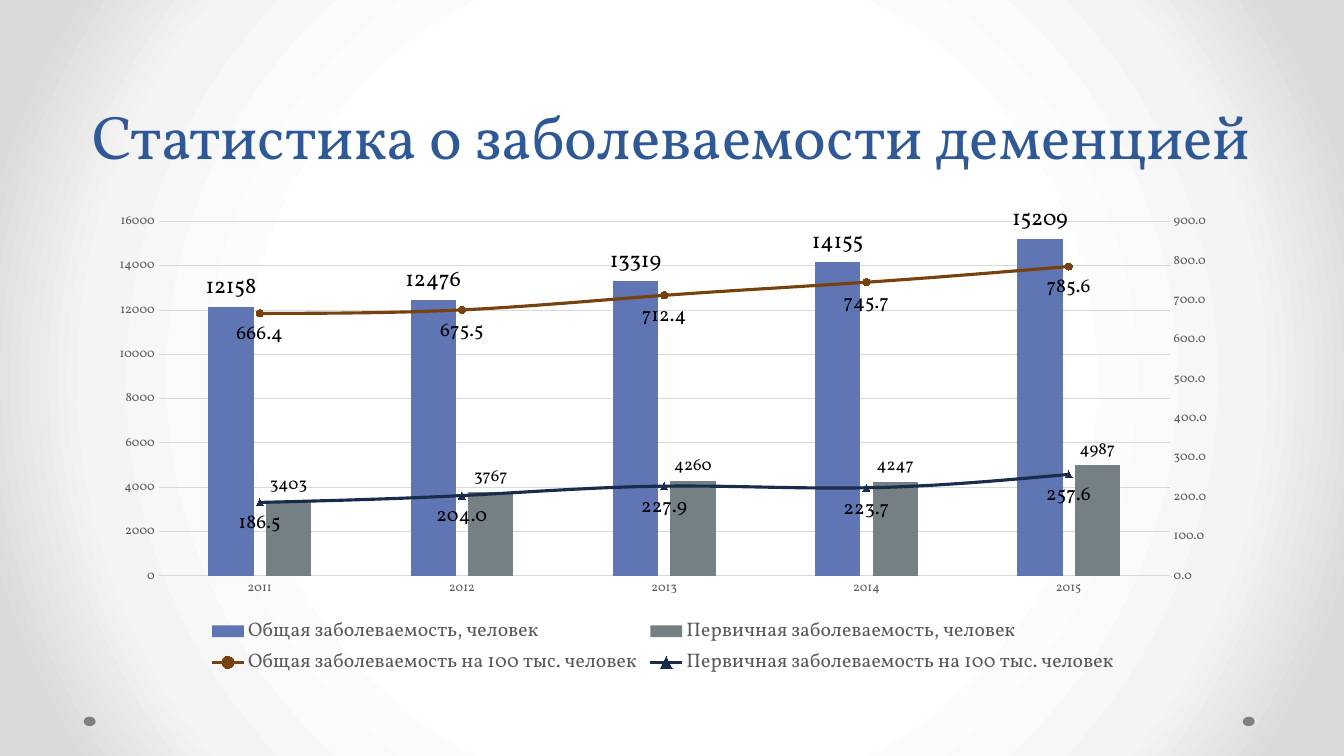
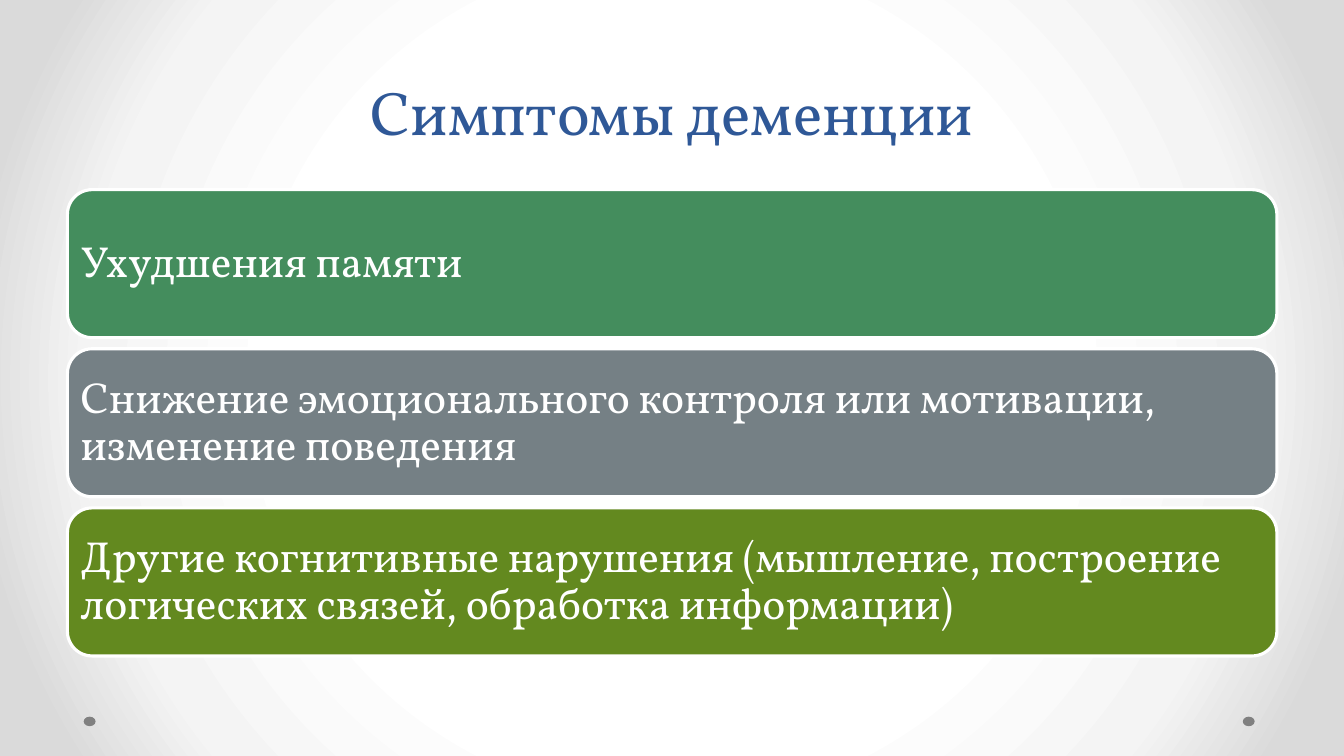
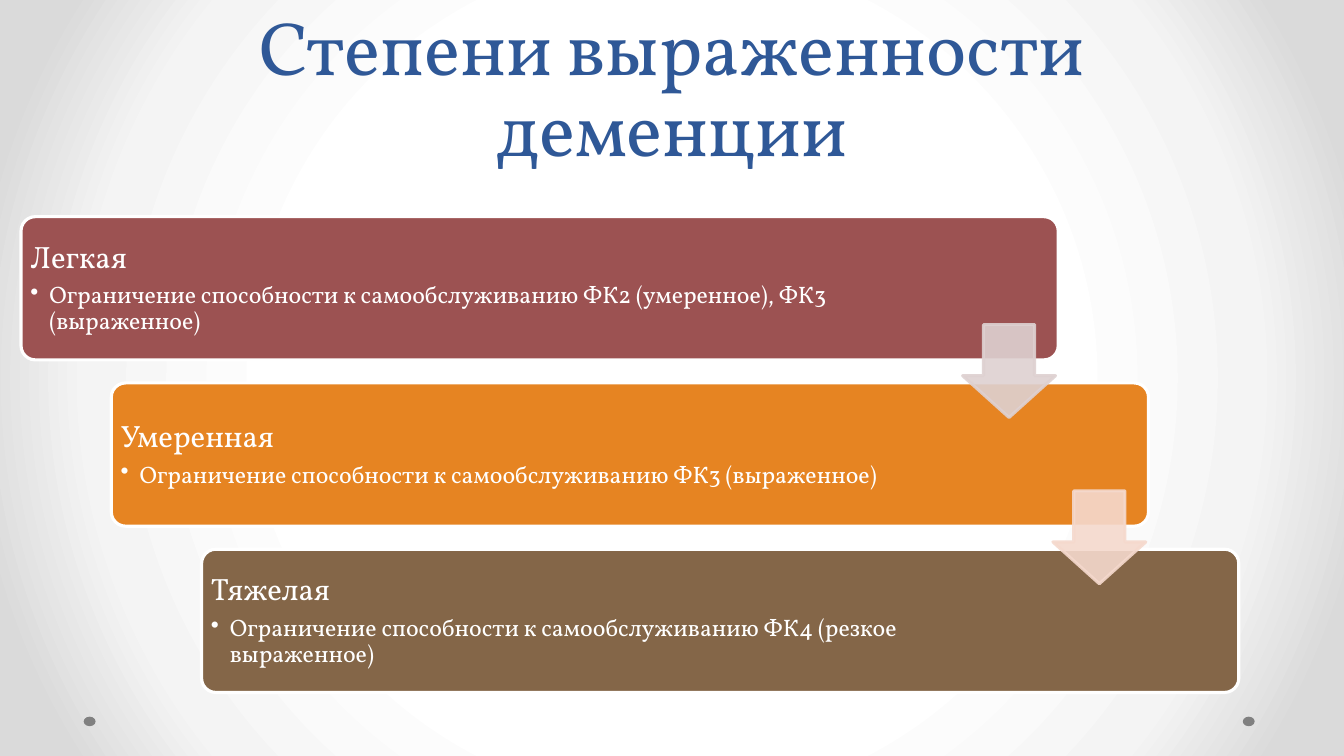
from copy import deepcopy
from dataclasses import dataclass

from pptx import Presentation
from pptx import util as u
from pptx.chart.axis import ValueAxis
from pptx.chart.data import CategoryChartData
from pptx.dml.color import RGBColor
from pptx.enum import chart as ch, shapes, text
from pptx.oxml import parse_xml
from pptx.oxml.ns import nsdecls, qn

Cm, Pt = u.Cm, u.Pt


@dataclass(frozen=True)
class Theme:
    """Colours, font and type sizes of the deck."""
    font: str = "Vollkorn"
    title: str = "2F5897"
    white: str = "FFFFFF"
    black: str = "000000"
    dot: str = "808080"
    grey: str = "595959"
    grid: str = "D9D9D9"
    backdrop: tuple = ((50, "FFFFFF"), (76, "F4F4F4"), (92, "DADADA"))
    title_size: int = 44
    big_title_size: int = 54
    title_leading: int = 58
    symptom_size: int = 31
    degree_size: int = 22
    detail_size: int = 17
    axis_size: int = 9
    legend_size: int = 14
    outline: float = 2.25
    hairline: float = 0.75


T = Theme()
TITLE_BOX = (1.7, 0, 30.48, 4.45)
YEARS = ("2011", "2012", "2013", "2014", "2015")
COLUMNS = (
    ("Общая заболеваемость, человек", (12158, 12476, 13319, 14155, 15209), "6076B4", 16),
    ("Первичная заболеваемость, человек", (3403, 3767, 4260, 4247, 4987), "758085", 12),
)
RATES = (
    ("Общая заболеваемость на 100 тыс. человек", (666.4, 675.5, 712.4, 745.7, 785.6),
     "77420D", "CIRCLE", "E68422"),
    ("Первичная заболеваемость на 100 тыс. человек", (186.5, 204.0, 227.9, 223.7, 257.6),
     "182C4B", "TRIANGLE", "846648"),
)
SYMPTOMS = (
    ("Ухудшения памяти", "448D5D"),
    ("Снижение эмоционального контроля или мотивации, изменение поведения", "758085"),
    ("Другие когнитивные нарушения (мышление, построение логических связей, "
     "обработка информации)", "63891F"),
)
DEGREES = (
    ("Легкая", "Ограничение способности к самообслуживанию ФК2 (умеренное), ФК3 (выраженное)",
     "9C5252", "DED1D1"),
    ("Умеренная", "Ограничение способности к самообслуживанию ФК3 (выраженное)",
     "E68422", "F5D9CD"),
    ("Тяжелая", "Ограничение способности к самообслуживанию ФК4 (резкое выраженное)",
     "846648", None),
)


def put(obj, **values):
    """Set each named attribute of obj."""
    for name, value in values.items():
        setattr(obj, name, value)


def rgb(color):
    """Turn RRGGBB into a colour."""
    return RGBColor.from_string(color)


def style_font(font, size, color):
    """Apply the deck font."""
    put(font, name=T.font, size=Pt(size))
    font.color.rgb = rgb(color)


def style_line(line, color, width):
    """Give a line its colour and width."""
    line.color.rgb = rgb(color)
    line.width = Pt(width)


def add_solid(s, kind, box, fill, line=None):
    """Add a flat preset shape; box is in centimetres."""
    sp = s.shapes.add_shape(kind, *map(Cm, box))
    sp.shadow.inherit = False
    sp.fill.solid()
    sp.fill.fore_color.rgb = rgb(fill)
    if line:
        style_line(sp.line, line, T.outline)
    else:
        sp.line.fill.background()
    return sp


def add_run(p, words, size, color=T.white):
    """Add formatted words to a paragraph."""
    r = p.add_run()
    r.text = words
    style_font(r.font, size, color)


def add_slide(prs, title, size=T.title_size, box=TITLE_BOX):
    """Add a slide with its title in the given box."""
    s = prs.slides.add_slide(prs.slide_layouts[5])
    sp = s.shapes.title
    put(sp, **dict(zip(("left", "top", "width", "height"), map(Cm, box))))
    tf = sp.text_frame
    put(tf, vertical_anchor=text.MSO_ANCHOR.BOTTOM, auto_size=text.MSO_AUTO_SIZE.NONE,
        word_wrap=True)
    p = tf.paragraphs[0]
    put(p, alignment=text.PP_ALIGN.CENTER, line_spacing=Pt(T.title_leading))
    add_run(p, title, size, T.title)
    return s


def set_master(prs, s):
    """Put the backdrop and the two footer dots on the master, drawn by way of slide s."""
    master = prs.slide_master
    master.background.fill.solid()
    solid = master._element.find(".//" + qn("p:bgPr") + "/" + qn("a:solidFill"))
    stops = "".join(f'<a:gs pos="{pos * 1000}"><a:srgbClr val="{color}"/></a:gs>'
                    for pos, color in T.backdrop)
    solid.getparent().replace(solid, parse_xml(
        f'<a:gradFill {nsdecls("a")} rotWithShape="1"><a:gsLst>{stops}</a:gsLst>'
        '<a:path path="circle"><a:fillToRect l="50000" t="50000" r="50000" b="50000"/>'
        '</a:path></a:gradFill>'))
    for number, left in enumerate((2.11, 31.32), 101):
        sp = add_solid(s, shapes.MSO_SHAPE.OVAL, (left, 18.06, 0.3, 0.24), T.dot)
        sp._element.nvSpPr.cNvPr.set("id", str(number))
        master.shapes._spTree.append(sp._element)


def add_rate_plot(chart):
    """Move the rate series to a line plot on a right axis."""
    area = chart._chartSpace.find(".//" + qn("c:plotArea"))
    bar, cat, val = (area.find(qn(tag)) for tag in ("c:barChart", "c:catAx", "c:valAx"))
    line = parse_xml(
        f'<c:lineChart {nsdecls("c")}><c:grouping val="standard"/><c:varyColors val="0"/>'
        '<c:marker val="1"/><c:axId val="501"/><c:axId val="502"/></c:lineChart>')
    for ser in bar.findall(qn("c:ser"))[len(COLUMNS):]:
        for flag in ser.findall(qn("c:invertIfNegative")):
            ser.remove(flag)
        line.find(qn("c:marker")).addprevious(ser)
    bar.addnext(line)
    right, hidden = deepcopy(val), deepcopy(cat)
    for axis, own, other in ((hidden, "501", "502"), (right, "502", "501")):
        axis.find(qn("c:axId")).set("val", own)
        axis.find(qn("c:crossAx")).set("val", other)
    hidden.find(qn("c:delete")).set("val", "1")
    right.find(qn("c:axPos")).set("val", "r")
    right.find(qn("c:crosses")).set("val", "max")
    val.addnext(right)
    right.addnext(hidden)
    axis = ValueAxis(right)
    axis.has_major_gridlines = False
    put(axis.tick_labels, number_format="0.0", number_format_is_linked=False)


def label_series(series, size, position, number_format):
    """Show the values of a series."""
    labels = series.data_labels
    put(labels, show_value=True, position=position, number_format=number_format,
        number_format_is_linked=False)
    style_font(labels.font, size, T.black)


def add_incidence_chart(s, box):
    """Draw the case columns and the rate lines in the box."""
    data = CategoryChartData()
    data.categories = YEARS
    for name, values, *_ in COLUMNS:
        data.add_series(name, values)
    for name, values, *_ in RATES:
        data.add_series(name, values, "0.0")
    chart = s.shapes.add_chart(ch.XL_CHART_TYPE.COLUMN_CLUSTERED, *map(Cm, box), data).chart
    put(chart, has_title=False, has_legend=True)
    style_font(chart.font, 10, T.black)
    put(chart.legend, position=ch.XL_LEGEND_POSITION.BOTTOM, include_in_layout=False)
    style_font(chart.legend.font, T.legend_size, T.grey)
    for axis in (chart.category_axis, chart.value_axis):
        put(axis, major_tick_mark=ch.XL_TICK_MARK.NONE, minor_tick_mark=ch.XL_TICK_MARK.NONE)
        style_font(axis.tick_labels.font, T.axis_size, T.grey)
    style_line(chart.category_axis.format.line, T.grid, T.hairline)
    chart.value_axis.format.line.fill.background()
    style_line(chart.value_axis.major_gridlines.format.line, T.grid, T.hairline)
    add_rate_plot(chart)
    columns, lines = chart.plots
    put(columns, gap_width=219, overlap=-27, vary_by_categories=False)
    for series, (_, _, color, size) in zip(columns.series, COLUMNS):
        series.format.fill.solid()
        series.format.fill.fore_color.rgb = rgb(color)
        label_series(series, size, ch.XL_LABEL_POSITION.OUTSIDE_END, "General")
    for series, (_, _, color, mark, mark_fill) in zip(lines.series, RATES):
        series.smooth = True
        style_line(series.format.line, color, T.outline)
        put(series.marker, style=ch.XL_MARKER_STYLE[mark], size=5)
        series.marker.format.fill.solid()
        series.marker.format.fill.fore_color.rgb = rgb(mark_fill)
        style_line(series.marker.format.line, color, T.hairline)
        label_series(series, 14, ch.XL_LABEL_POSITION.BELOW, "0.0")


def add_panel(s, box, fill, lines, inset, right_inset, corner):
    """Draw a rounded panel with (words, size, space after) lines."""
    sp = add_solid(s, shapes.MSO_SHAPE.ROUNDED_RECTANGLE, box, fill, T.white)
    sp.adjustments[0] = corner
    tf = sp.text_frame
    put(tf, word_wrap=True, vertical_anchor=text.MSO_ANCHOR.MIDDLE, margin_left=Cm(inset),
        margin_top=Cm(inset), margin_bottom=Cm(inset), margin_right=Cm(right_inset))
    for i, (words, size, after) in enumerate(lines):
        p = tf.add_paragraph() if i else tf.paragraphs[0]
        put(p, alignment=text.PP_ALIGN.LEFT, line_spacing=0.9, space_after=Pt(after))
        add_run(p, words, size)
    return sp


def add_bullet(p, indent):
    """Give a paragraph a hanging round bullet."""
    pPr = p._p.get_or_add_pPr()
    pPr.set("marL", str(Cm(indent)))
    pPr.set("indent", str(-Cm(indent)))
    pPr.append(parse_xml(f'<a:buChar {nsdecls("a")} char="•"/>'))


def add_symptoms(s, box, gap=0.28):
    """Stack equal symptom panels in the box."""
    left, top, width, height = box
    step = (height + gap) / len(SYMPTOMS)
    for i, (words, fill) in enumerate(SYMPTOMS):
        add_panel(s, (left, top + i * step, width, step - gap), fill,
                  [(words, T.symptom_size, 0)], 0.15, 0.15, 0.1667)


def add_step_arrow(s, box, color):
    """Draw a slightly transparent down arrow."""
    sp = add_solid(s, shapes.MSO_SHAPE.DOWN_ARROW, box, color, color)
    sp.adjustments[0], sp.adjustments[1] = 0.55, 0.45
    for clr in sp._element.spPr.iter(qn("a:srgbClr")):
        clr.append(parse_xml(f'<a:alpha {nsdecls("a")} val="90000"/>'))


def add_degrees(s, box, width=26.14, height=3.61, arrow=2.34):
    """Draw the staircase of degrees across the box, joined by arrows."""
    left, top, full_width, full_height = box
    steps = len(DEGREES) - 1
    dx, dy = (full_width - width) / steps, (full_height - height) / steps
    for i, (name, detail, fill, _) in enumerate(DEGREES):
        sp = add_panel(s, (left + i * dx, top + i * dy, width, height), fill,
                       [(name, T.degree_size, 6), (detail, T.detail_size, 2.5)], 0.13, 5, 0.1)
        add_bullet(sp.text_frame.paragraphs[1], 0.48)
    for i, (*_, color) in enumerate(DEGREES[:-1]):
        add_step_arrow(s, (left + i * dx + width - arrow - 0.07, top + i * dy + 2.72,
                           arrow, arrow), color)


def main():
    """Build and save the deck."""
    prs = Presentation()
    put(prs, slide_width=Cm(33.87), slide_height=Cm(19.05))
    s = add_slide(prs, "Статистика о заболеваемости деменцией")
    set_master(prs, s)
    add_incidence_chart(s, (2.44, 5.13, 28.55, 12.01))
    s = add_slide(prs, "Симптомы деменции", box=(1.7, 1.07, 30.48, 2.79))
    add_symptoms(s, (1.7, 4.78, 30.48, 11.75))
    s = add_slide(prs, "Степени выраженности деменции", T.big_title_size)
    add_degrees(s, (0.53, 5.46, 30.69, 11.99))
    prs.save("out.pptx")


if __name__ == "__main__":
    main()
